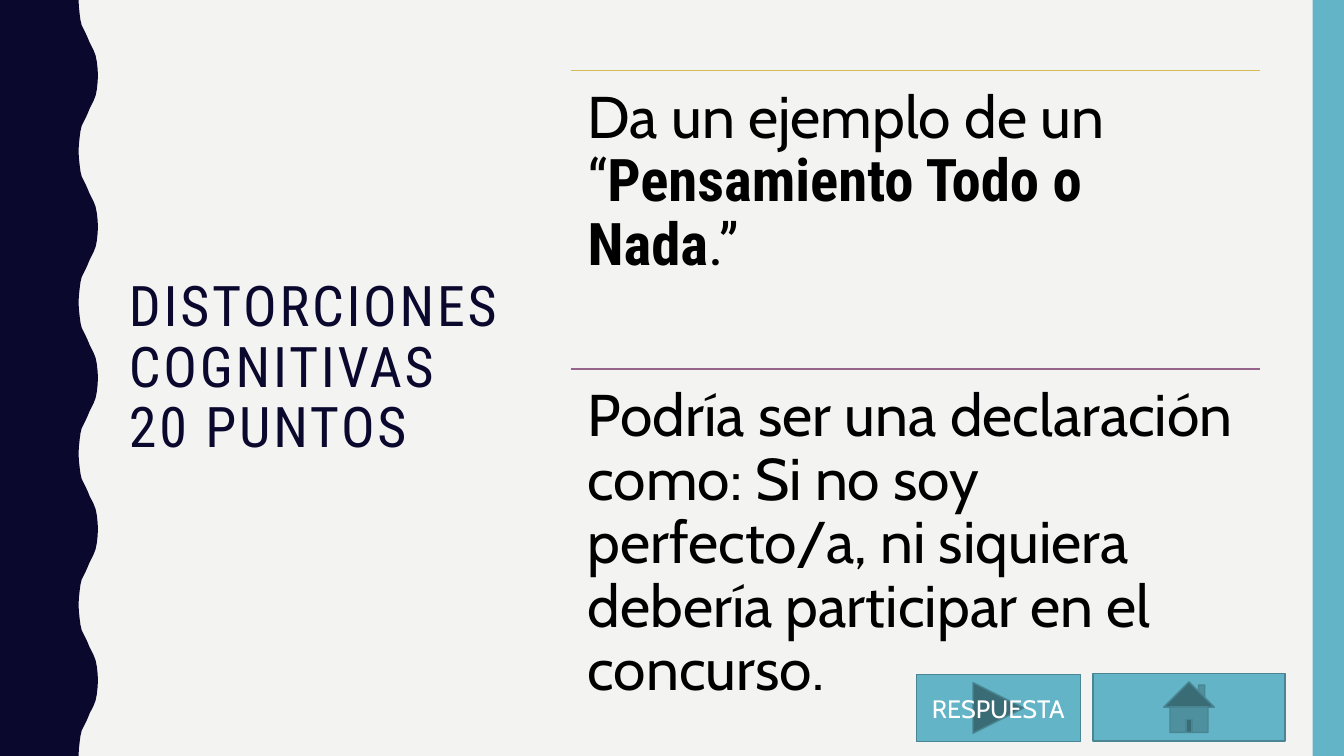
from pptx import Presentation
from pptx.dml.color import RGBColor
from pptx.enum.shapes import MSO_CONNECTOR, MSO_SHAPE
from pptx.enum.text import MSO_ANCHOR, PP_ALIGN
from pptx.oxml.ns import qn
from pptx.util import Cm, Pt
from lxml import etree

RECT = MSO_SHAPE.RECTANGLE
HOME = MSO_SHAPE.ACTION_BUTTON_HOME
NEXT = MSO_SHAPE.ACTION_BUTTON_FORWARD_OR_NEXT
STRAIGHT = MSO_CONNECTOR.STRAIGHT
TOP, MIDDLE = MSO_ANCHOR.TOP, MSO_ANCHOR.MIDDLE
LEFT, CENTER = PP_ALIGN.LEFT, PP_ALIGN.CENTER

WIDTH, HEIGHT = 33.87, 19.05
BODY, HEAD = "Cabin", "Roboto Condensed"
COLORS = {
    "paper": "F3F3F2", "navy": "0B082E", "teal": "62B4C6", "edge": "498592",
    "gold": "D3BA55", "plum": "96648A", "black": "000000", "white": "FFFFFF",
}
WAVES = 5
RISE = [
    (1.98, 0), (1.99, 0.18), (2.01, 0.36), (2.03, 0.51), (2.06, 0.64),
    (2.11, 0.74), (2.16, 0.84), (2.21, 0.95), (2.26, 1.07), (2.31, 1.17),
    (2.36, 1.27), (2.41, 1.4), (2.44, 1.55), (2.46, 1.73), (2.47, 1.9),
]


class SlideBuilder:
    def __init__(self, slide):
        self.s = slide

    def color(self, name):
        return RGBColor.from_string(COLORS[name])

    def background(self, name):
        fill = self.s.background.fill
        fill.solid()
        fill.fore_color.rgb = self.color(name)

    def paint(self, sp, fill, line=None):
        sp.shadow.inherit = False
        sp.fill.solid()
        sp.fill.fore_color.rgb = self.color(fill)
        if line:
            sp.line.color.rgb = self.color(line)
            sp.line.width = Pt(1)
        else:
            sp.line.fill.background()

    def wavy_band(self, fill):
        period = HEIGHT / WAVES
        wave = RISE + [(x, period - y) for x, y in reversed(RISE[1:-1])]
        edge = [(x, y + i * period) for i in range(WAVES) for x, y in wave]
        points = edge + [(RISE[0][0], HEIGHT), (0, HEIGHT)]
        builder = self.s.shapes.build_freeform(0, 0)
        builder.add_line_segments([(Cm(x), Cm(y)) for x, y in points], close=True)
        self.paint(builder.convert_to_shape(), fill)

    def shape(self, kind, x, y, w, h, fill, line=None):
        sp = self.s.shapes.add_shape(kind, Cm(x), Cm(y), Cm(w), Cm(h))
        self.paint(sp, fill, line)
        return sp

    def rule(self, x, y, w, color):
        line = self.s.shapes.add_connector(STRAIGHT, Cm(x), Cm(y), Cm(x + w), Cm(y))
        line.line.color.rgb = self.color(color)
        line.line.width = Pt(1)
        etree.SubElement(line._element.spPr, qn("a:effectLst"))

    def text_box(self, x, y, w, h, anchor=TOP, inset=None):
        sp = self.s.shapes.add_textbox(Cm(x), Cm(y), Cm(w), Cm(h))
        tf = sp.text_frame
        tf.word_wrap = True
        tf.vertical_anchor = anchor
        if inset:
            tf.margin_left = tf.margin_right = Cm(inset)
            tf.margin_top = tf.margin_bottom = Cm(inset)
        return tf

    def paragraph(self, tf, align=LEFT, spacing=0.9):
        p = tf.paragraphs[0]
        p.alignment = align
        p.line_spacing = spacing
        return p

    def run(self, p, text, size, color, font=BODY, bold=False, tracking=0):
        r = p.add_run()
        r.text = text
        r.font.size = Pt(size)
        r.font.name = font
        r.font.bold = bold
        r.font.color.rgb = self.color(color)
        if tracking:
            r.font._element.set("spc", str(tracking * 100))


def main():
    prs = Presentation()
    prs.slide_width, prs.slide_height = Cm(WIDTH), Cm(HEIGHT)
    slide = SlideBuilder(prs.slides.add_slide(prs.slide_layouts[6]))

    slide.background("paper")
    slide.wavy_band("navy")
    slide.shape(RECT, 33.08, 0, 0.79, HEIGHT, "teal")
    slide.shape(HOME, 27.55, 16.97, 4.83, 1.7, "teal", "edge")
    answer = slide.shape(NEXT, 23.09, 16.99, 4.14, 1.7, "teal", "edge")
    answer.text_frame.vertical_anchor = MIDDLE
    p = slide.paragraph(answer.text_frame, CENTER, 1.0)
    slide.run(p, "RESPUESTA", 18, "white")

    title = slide.text_box(3, 1.8, 9.88, 15.01, MIDDLE)
    p = slide.paragraph(title)
    slide.run(p, "DISTORCIONES COGNITIVAS", 40, "navy", HEAD, tracking=2)
    p.add_line_break()
    slide.run(p, "20 PUNTOS", 40, "navy", HEAD, tracking=2)

    question = [
        ("Da un ejemplo de un ", BODY, False),
        ("“", HEAD, False),
        ("Pensamiento Todo o Nada", HEAD, True),
        (".”", HEAD, False),
    ]
    reply = [(
        "Podría ser una declaración como: Si no soy perfecto/a, "
        "ni siquiera debería participar en el concurso.", BODY, False,
    )]
    left, top, width, height = 14.38, 1.78, 17.37, 7.52
    for i, (color, runs) in enumerate([("gold", question), ("plum", reply)]):
        y = top + i * height
        slide.rule(left, y, width, color)
        p = slide.paragraph(slide.text_box(left, y, width, height, inset=0.43))
        for text, font, bold in runs:
            slide.run(p, text, 42, "black", font, bold)

    prs.save("out.pptx")


if __name__ == "__main__":
    main()
